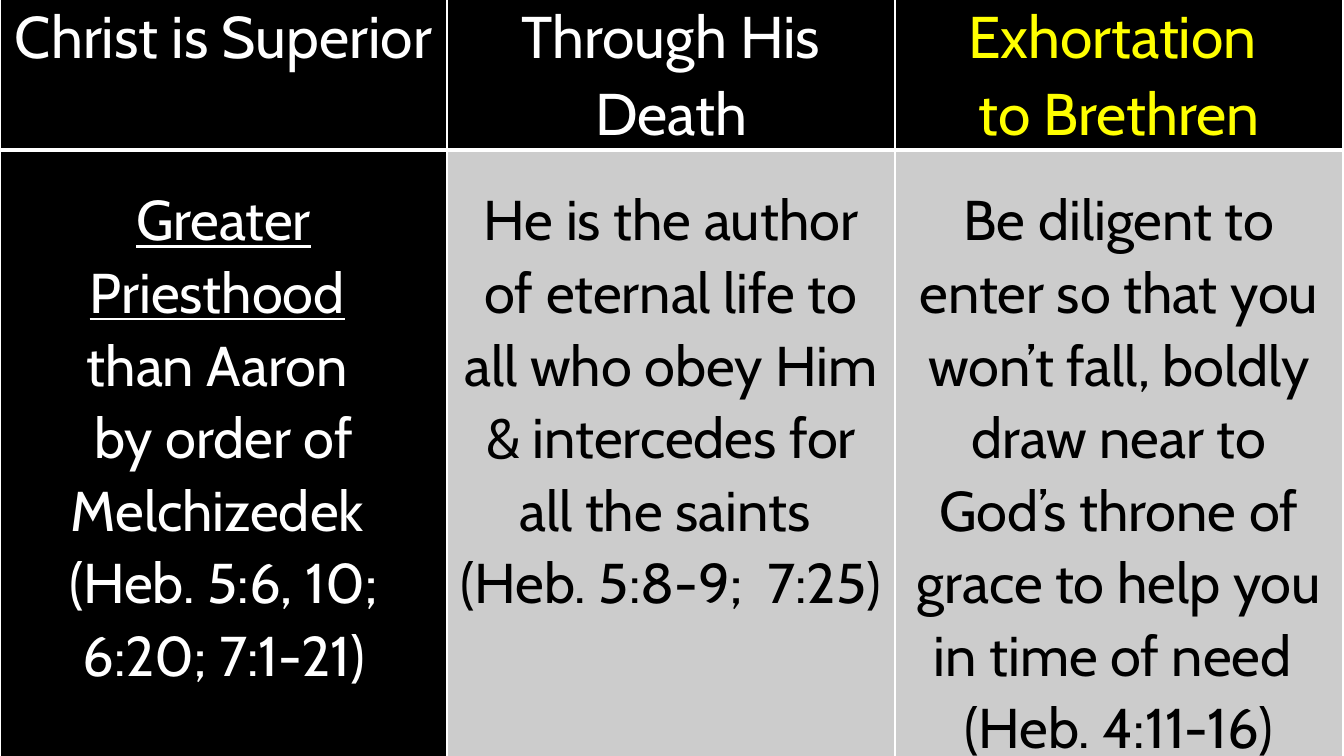
from lxml import etree
from pptx import Presentation
from pptx import util as u
from pptx.dml.color import RGBColor
from pptx.enum import text
from pptx.oxml.ns import qn

COLOURS = {"black": "000000", "white": "FFFFFF", "yellow": "FFFF00", "grey": "CCCCCC"}
EMU_PER_PX = 914400 / 100.8
PAGE_WIDTH, PAGE_HEIGHT = 1344, 756
COLUMN_WIDTHS = [447, 448, 448]

# Each cell: fill, text colour, paragraphs; each paragraph is (text, underlined) spans
HEADINGS = [
    ("black", "white", [[("Christ is Superior", False)]]),
    ("black", "white", [[("Through His Death", False)]]),
    ("black", "yellow", [[("Exhortation ", False)], [("to Brethren", False)]]),
]
POINTS = [
    ("black", "white", [
        [("Greater Priesthood", True), (" ", False)],
        [("than Aaron ", False)],
        [("by order of Melchizedek ", False)],
        [("(Heb. 5:6, 10; 6:20; 7:1-21)", False)],
    ]),
    ("grey", "black", [
        [("He is the author of eternal life to all who obey Him "
          "& intercedes for all the saints ", False)],
        [("(Heb. 5:8-9;  7:25)", False)],
    ]),
    ("grey", "black", [
        [("Be diligent to enter so that you won’t fall, boldly draw near to "
          "God’s throne of grace to help you in time of need ", False)],
        [("(Heb. 4:11-16)", False)],
    ]),
]
# Each row: height and top margin in px, text size and border widths in points
ROWS = [
    {"cells": HEADINGS, "height": 170, "top": 17, "size": 42,
     "borders": {"L": 1, "R": 1, "T": 1, "B": 3}},
    {"cells": POINTS, "height": 636, "top": 32, "size": 40,
     "borders": {"L": 1, "R": 1, "T": 3, "B": 1}},
]


def px(length):
    return u.Emu(round(length * EMU_PER_PX))


def colour(name):
    return RGBColor.from_string(COLOURS[name])


def set_values(target, values):
    for name, value in values.items():
        setattr(target, name, value)


class SlideWriter:
    font = "Cabin"
    line_spacing = 1.07

    def __init__(self, page):
        self.page = page

    def table(self, left, top, widths, rows):
        height = sum(row["height"] for row in rows)
        frame = self.page.shapes.add_table(
            len(rows), len(widths), px(left), px(top), px(sum(widths)), px(height))
        table = frame.table
        set_values(table, {"first_row": False, "horz_banding": False})
        for column, width in zip(table.columns, widths):
            column.width = px(width)
        for r, row in enumerate(rows):
            table.rows[r].height = px(row["height"])
            for c, content in enumerate(row["cells"]):
                self.cell(table.cell(r, c), row, *content)

    def cell(self, cell, row, fill, text_colour, paragraphs):
        set_values(cell, {"margin_left": px(7), "margin_right": px(7),
                          "margin_top": px(row["top"]), "margin_bottom": 0,
                          "vertical_anchor": text.MSO_ANCHOR.TOP})
        cell.fill.solid()
        cell.fill.fore_color.rgb = colour(fill)
        self.borders(cell, row["borders"])
        frame = cell.text_frame
        for i, spans in enumerate(paragraphs):
            para = frame.add_paragraph() if i else frame.paragraphs[0]
            set_values(para, {"alignment": text.PP_ALIGN.CENTER,
                              "line_spacing": self.line_spacing})
            for words, underlined in spans:
                span = para.add_run()
                span.text = words
                set_values(span.font, {"name": self.font, "size": u.Pt(row["size"]),
                                       "bold": False, "underline": underlined})
                span.font.color.rgb = colour(text_colour)

    def borders(self, cell, widths):
        properties = cell._tc.get_or_add_tcPr()
        for i, (side, width) in enumerate(widths.items()):
            line = etree.Element(qn("a:ln" + side), w=str(u.Pt(width)))
            fill = etree.SubElement(line, qn("a:solidFill"))
            etree.SubElement(fill, qn("a:srgbClr"), val=COLOURS["white"])
            properties.insert(i, line)


def main():
    deck = Presentation()
    set_values(deck, {"slide_width": px(PAGE_WIDTH), "slide_height": px(PAGE_HEIGHT)})
    page = deck.slides.add_slide(deck.slide_layouts.get_by_name("Blank"))

    # Comparison table, running past the top and bottom of the page
    SlideWriter(page).table(0, -20, COLUMN_WIDTHS, ROWS)
    deck.save("out.pptx")


if __name__ == "__main__":
    main()
